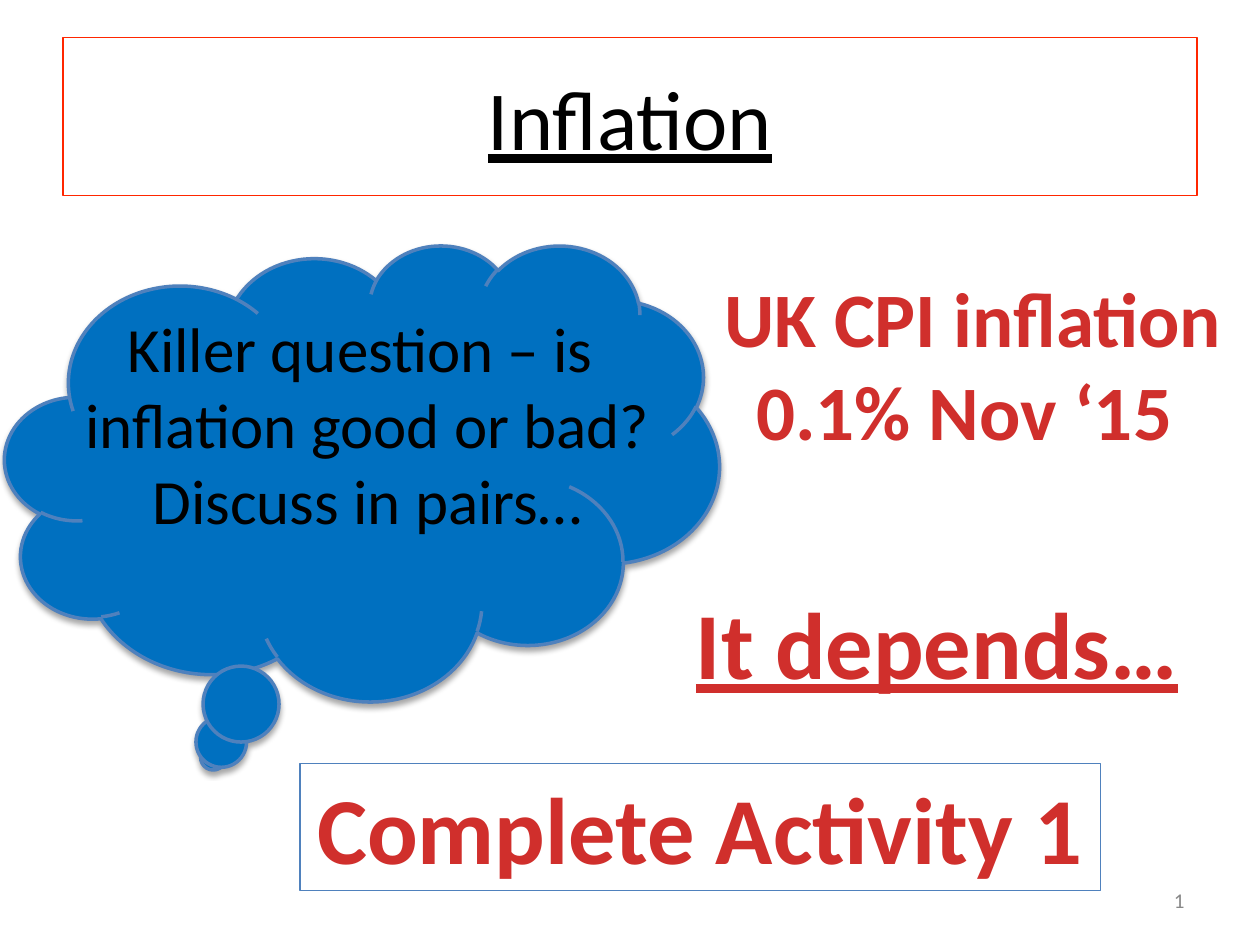
from lxml.etree import SubElement
from pptx import Presentation
from pptx.dml.color import RGBColor
from pptx.enum.shapes import MSO_SHAPE as Shape
from pptx.enum.text import MSO_ANCHOR as Anchor, MSO_AUTO_SIZE as AutoSize, PP_ALIGN as Align
from pptx.oxml import parse_xml
from pptx.oxml.ns import nsdecls, qn
from pptx.util import Cm, Pt

BLACK, GREY, BLUE, EDGE, TITLE_EDGE = "000000", "888888", "0070C0", "4F81BD", "FF2600"
RED_FADE = ((0, "FC7C7A"), (75, "D02F2C"), (100, "C70500"))


def rgb(hex_color):
    return RGBColor.from_string(hex_color)


def fade_text(font, run, stops):
    """Fill a run with a top-to-bottom gradient of (percent, hex) stops."""
    font.fill.solid()
    properties = run._r.get_or_add_rPr()
    stop_list = "".join(
        f'<a:gs pos="{percent * 1000}"><a:srgbClr val="{color}"/></a:gs>' for percent, color in stops)
    gradient = parse_xml(f'<a:gradFill {nsdecls("a")}><a:gsLst>{stop_list}</a:gsLst>'
                         '<a:lin ang="5400000" scaled="0"/></a:gradFill>')
    properties.replace(properties.find(qn("a:solidFill")), gradient)


def write(frame, *lines, size, color=BLACK, bold=False, underline=False, align=Align.CENTER):
    """Write one paragraph per line; color is a hex string or gradient stops."""
    for number, line in enumerate(lines):
        paragraph = frame.add_paragraph() if number else frame.paragraphs[0]
        paragraph.alignment = align
        run = paragraph.add_run()
        run.text = line
        font = run.font
        font.name, font.size, font.bold, font.underline = "Calibri", Pt(size), bold, underline
        if isinstance(color, str):
            font.color.rgb = rgb(color)
        else:
            fade_text(font, run, color)


class SlideBuilder:
    def __init__(self, slide):
        self.slide = slide

    def text(self, box, *lines, inset=(0.25, 0.13), anchor=Anchor.TOP, wrap=True,
             grow=False, edge=None, **style):
        label = self.slide.shapes.add_textbox(*map(Cm, box))
        frame = label.text_frame
        frame.margin_left = frame.margin_right = Cm(inset[0])
        frame.margin_top = frame.margin_bottom = Cm(inset[1])
        frame.vertical_anchor, frame.word_wrap = anchor, wrap
        frame.auto_size = AutoSize.SHAPE_TO_FIT_TEXT if grow else AutoSize.NONE
        if edge:
            label.line.color.rgb = rgb(edge)
            label.line.width = Pt(0.75)
        write(frame, *lines, **style)

    def headline(self, box, *lines, size=54, **options):
        self.text(box, *lines, size=size, color=RED_FADE, bold=True,
                  wrap=False, grow=True, **options)

    def thought_cloud(self, box):
        cloud = self.slide.shapes.add_shape(Shape.CLOUD_CALLOUT, *map(Cm, box))
        cloud.fill.solid()
        cloud.fill.fore_color.rgb = rgb(BLUE)
        cloud.line.color.rgb = rgb(EDGE)
        cloud.line.width = Pt(2)
        cloud.shadow.inherit = False
        effects = cloud._element.spPr.find(qn("a:effectLst"))
        shadow = SubElement(effects, qn("a:outerShdw"), blurRad=str(Pt(3)), dist=str(Pt(1.8)),
                            dir="5400000", rotWithShape="0")
        shade = SubElement(shadow, qn("a:srgbClr"), val=BLACK)
        SubElement(shade, qn("a:alpha"), val="35000")


def main():
    deck = Presentation()
    deck.slide_width, deck.slide_height = Cm(25.4), Cm(19.05)
    page = SlideBuilder(deck.slides.add_slide(deck.slide_layouts[6]))

    page.text((1.27, 0.76, 22.86, 3.18), "Inflation", size=48, underline=True,
              inset=(0, 0), anchor=Anchor.MIDDLE, edge=TITLE_EDGE)
    page.text((18.21, 17.78, 5.92, 0.74), "1", size=12, color=GREY,
              align=Align.RIGHT, anchor=Anchor.MIDDLE)
    page.thought_cloud((0.1, 4.93, 14.4, 9.19))
    page.text((1.5, 6.12, 11.81, 6.4), "Killer question – is ", "inflation good or bad? ",
              "Discuss in pairs…", size=36, inset=(0.13, 0.13), grow=True)
    page.headline((13.72, 11.66, 10.34, 2.57), "It depends…", underline=True)
    page.headline((14.3, 5.33, 10.64, 4.01), "UK CPI inflation", "0.1% Nov ‘15 ", size=44)
    page.headline((6.05, 15.39, 16.13, 2.57), "Complete Activity 1", edge=EDGE)

    deck.save("out.pptx")


if __name__ == "__main__":
    main()
